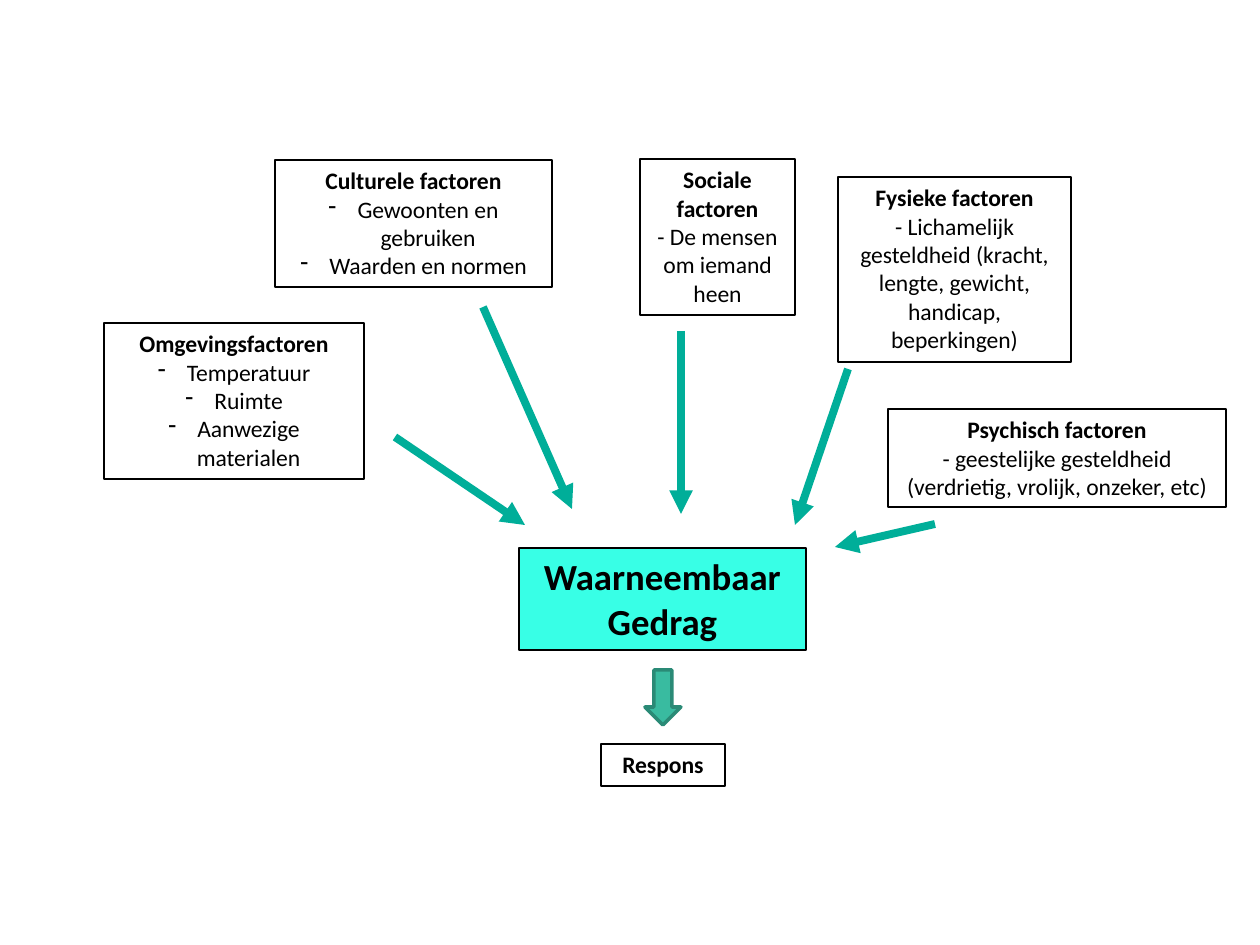
"""Build a slide showing the factors that lead to observable behaviour and a response."""
from lxml import etree
from pptx import Presentation
from pptx.dml.color import RGBColor
from pptx.enum.shapes import MSO_CONNECTOR, MSO_SHAPE
from pptx.enum.text import MSO_AUTO_SIZE, PP_ALIGN
from pptx.oxml.ns import qn
from pptx.util import Emu, Pt

STRAIGHT = MSO_CONNECTOR.STRAIGHT
DOWN_ARROW = MSO_SHAPE.DOWN_ARROW
CENTER = PP_ALIGN.CENTER
FIT_SHAPE = MSO_AUTO_SIZE.SHAPE_TO_FIT_TEXT
COLORS = {
    "text": "000000",
    "behaviour": "38FFE6",
    "arrow": "00AE99",
    "block": "39BBA0",
    "block_line": "2A8A76",
}
BULLET_INDENT = 29


def px(*lengths):
    return [Emu(round(length * 914400 / 126)) for length in lengths]


def color(name):
    return RGBColor.from_string(COLORS[name])


presentation = Presentation()
presentation.slide_width, presentation.slide_height = px(1260, 945)
slide = presentation.slides.add_slide(presentation.slide_layouts[6])

# Each entry: position, font size, bold heading lines, body lines, bulleted, fill
boxes = [
    ((519, 548, 287, 102), 21, ["Waarneembaar", "Gedrag"], [], False, "behaviour"),
    ((601, 744, 124, 42), 13.5, ["Respons"], [], False, None),
    ((104, 323, 260, 156), 13.5, ["Omgevingsfactoren"],
     ["Temperatuur", "Ruimte", "Aanwezige materialen"], True, None),
    ((275, 160, 277, 127), 13.5, ["Culturele factoren"],
     ["Gewoonten en gebruiken", "Waarden en normen"], True, None),
    ((838, 177, 233, 185), 13.5, ["Fysieke factoren"],
     ["- Lichamelijk gesteldheid (kracht, lengte, gewicht, handicap, beperkingen)"], False, None),
    ((640, 159, 155, 156), 13.5, ["Sociale factoren"],
     ["- De mensen om iemand heen"], False, None),
    ((888, 409, 338, 98), 13.5, ["Psychisch factoren"],
     ["- geestelijke gesteldheid (verdrietig, vrolijk, onzeker, etc)"], False, None),
]
for position, size, headings, body, bulleted, fill in boxes:
    box = slide.shapes.add_textbox(*px(*position))
    box.line.color.rgb = color("text")
    box.line.width = Pt(0.75)
    if fill:
        box.fill.solid()
        box.fill.fore_color.rgb = color(fill)
    text_frame = box.text_frame
    text_frame.word_wrap = True
    text_frame.auto_size = FIT_SHAPE
    text_frame.text = "\n".join(headings + body)
    for index, paragraph in enumerate(text_frame.paragraphs):
        is_heading = index < len(headings)
        paragraph.alignment = CENTER
        if bulleted and not is_heading:
            properties = paragraph._p.get_or_add_pPr()
            indent = px(BULLET_INDENT)[0]
            properties.set("marL", str(indent))
            properties.set("indent", str(-indent))
            etree.SubElement(properties, qn("a:buFontTx"))
            etree.SubElement(properties, qn("a:buChar")).set("char", "-")
        font = paragraph.runs[0].font
        font.name = "Calibri"
        font.size = Pt(size)
        font.bold = is_heading
        font.color.rgb = color("text")

response_arrow = slide.shapes.add_shape(DOWN_ARROW, *px(645, 670, 36, 55))
response_arrow.shadow.inherit = False
response_arrow.fill.solid()
response_arrow.fill.fore_color.rgb = color("block")
response_arrow.line.color.rgb = color("block_line")
response_arrow.line.width = Pt(2)

factor_arrows = [
    (395, 437, 525, 525),
    (935, 524, 835, 547),
    (848, 369, 795, 525),
    (681, 331, 681, 514),
    (483, 307, 572, 509),
]
for ends in factor_arrows:
    arrow = slide.shapes.add_connector(STRAIGHT, *px(*ends))
    arrow.line.color.rgb = color("arrow")
    arrow.line.width = Pt(4.5)
    line = arrow.line._get_or_add_ln()
    etree.SubElement(line, qn("a:tailEnd")).set("type", "triangle")
    etree.SubElement(arrow._element.spPr, qn("a:effectLst"))

presentation.save("out.pptx")
